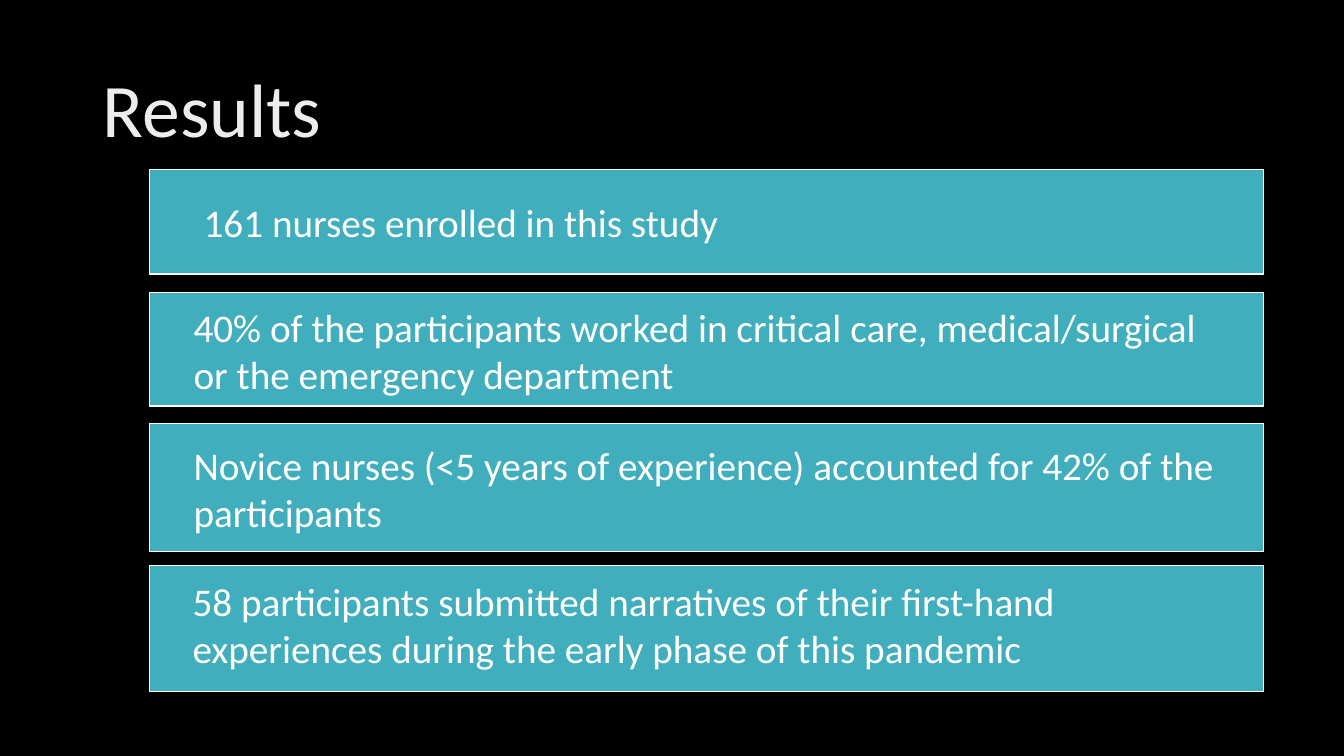
from copy import deepcopy
from dataclasses import dataclass

from pptx import Presentation
from pptx import util as u
from pptx.dml.color import RGBColor
from pptx.enum import shapes, text
from pptx.oxml.ns import qn

TITLE = "Results"
FINDINGS = [
    {"words": "161 nurses enrolled in this study",
     "bar": (1.68, 1.04), "label": (1.95, 1.68, 10.58, 1.04), "after": 0},
    {"words": "40% of the participants worked in critical care, "
              "medical/surgical or the emergency department",
     "bar": (2.9, 1.13), "label": (1.85, 2.93, 10.27, 1.1), "after": 20},
    {"words": "Novice nurses (<5 years of experience) accounted for 42% "
              "of the participants",
     "bar": (4.2, 1.27), "label": (1.85, 4.41, 10.27, 0.87), "after": 20},
    {"words": "58 participants submitted narratives of their first-hand "
              "experiences during the early phase of this pandemic",
     "bar": (5.61, 1.25), "label": (1.84, 5.75, 10.22, 0.89), "after": 20},
]
SLIDE_SIZE = (13.33, 7.5)
TITLE_BOX = (0.92, 0.4, 11.5, 1.45)
BAR_LEFT, BAR_WIDTH = 1.48, 11.05


@dataclass(frozen=True)
class Theme:
    font: str = "Calibri"
    title_size: int = 54
    body_size: int = 28
    background: str = "000000"
    bar: str = "41AEBD"
    light: str = "FFFFFF"
    title_stops: tuple = ((0, "BFBFBF"), (0.28, "EDEDED"), (1, "FFFFFF"))
    title_angle: int = 280


THEME = Theme()
INSETS = {f"margin_{side}": u.Inches(0.07)
          for side in ("left", "right", "top", "bottom")}
FRAME = {"word_wrap": True, "auto_size": text.MSO_AUTO_SIZE.NONE,
         "vertical_anchor": text.MSO_ANCHOR.MIDDLE}


def apply(target, values):
    for name, value in values.items():
        setattr(target, name, value)


def inches(box):
    return [u.Inches(length) for length in box]


def paint(fill, color):
    fill.solid()
    fill.fore_color.rgb = RGBColor.from_string(color)


def write(frame, words, size, frame_format, paragraph_format):
    apply(frame, frame_format)
    paragraph = frame.paragraphs[0]
    apply(paragraph, paragraph_format)
    run = paragraph.add_run()
    run.text = words
    apply(run.font, {"name": THEME.font, "size": u.Pt(size)})
    return run


def add_title(slide):
    title = slide.shapes.title
    apply(title, dict(zip(("left", "top", "width", "height"), inches(TITLE_BOX))))
    run = write(title.text_frame, TITLE, THEME.title_size, FRAME,
                {"alignment": text.PP_ALIGN.LEFT, "line_spacing": 0.9})
    fill = run.font.fill
    fill.gradient()
    fill.gradient_angle = THEME.title_angle
    stops = run._r.rPr.find(qn("a:gradFill")).find(qn("a:gsLst"))
    stops.append(deepcopy(stops[-1]))
    for stop, (position, color) in zip(fill.gradient_stops, THEME.title_stops):
        stop.position = position
        stop.color.rgb = RGBColor.from_string(color)


def add_finding(slide, finding):
    top, height = finding["bar"]
    bar = slide.shapes.add_shape(shapes.MSO_SHAPE.RECTANGLE,
                                 *inches((BAR_LEFT, top, BAR_WIDTH, height)))
    bar.shadow.inherit = False
    paint(bar.fill, THEME.bar)
    paint(bar.line.fill, THEME.light)
    bar.line.width = u.Pt(1)
    label = slide.shapes.add_textbox(*inches(finding["label"]))
    run = write(label.text_frame, finding["words"], THEME.body_size,
                FRAME | INSETS, {"space_after": u.Pt(finding["after"])})
    paint(run.font.fill, THEME.light)


def main():
    presentation = Presentation()
    presentation.slide_width, presentation.slide_height = inches(SLIDE_SIZE)
    slide = presentation.slides.add_slide(presentation.slide_layouts[5])
    paint(slide.background.fill, THEME.background)
    add_title(slide)
    for finding in FINDINGS:
        add_finding(slide, finding)
    presentation.save("out.pptx")


if __name__ == "__main__":
    main()
